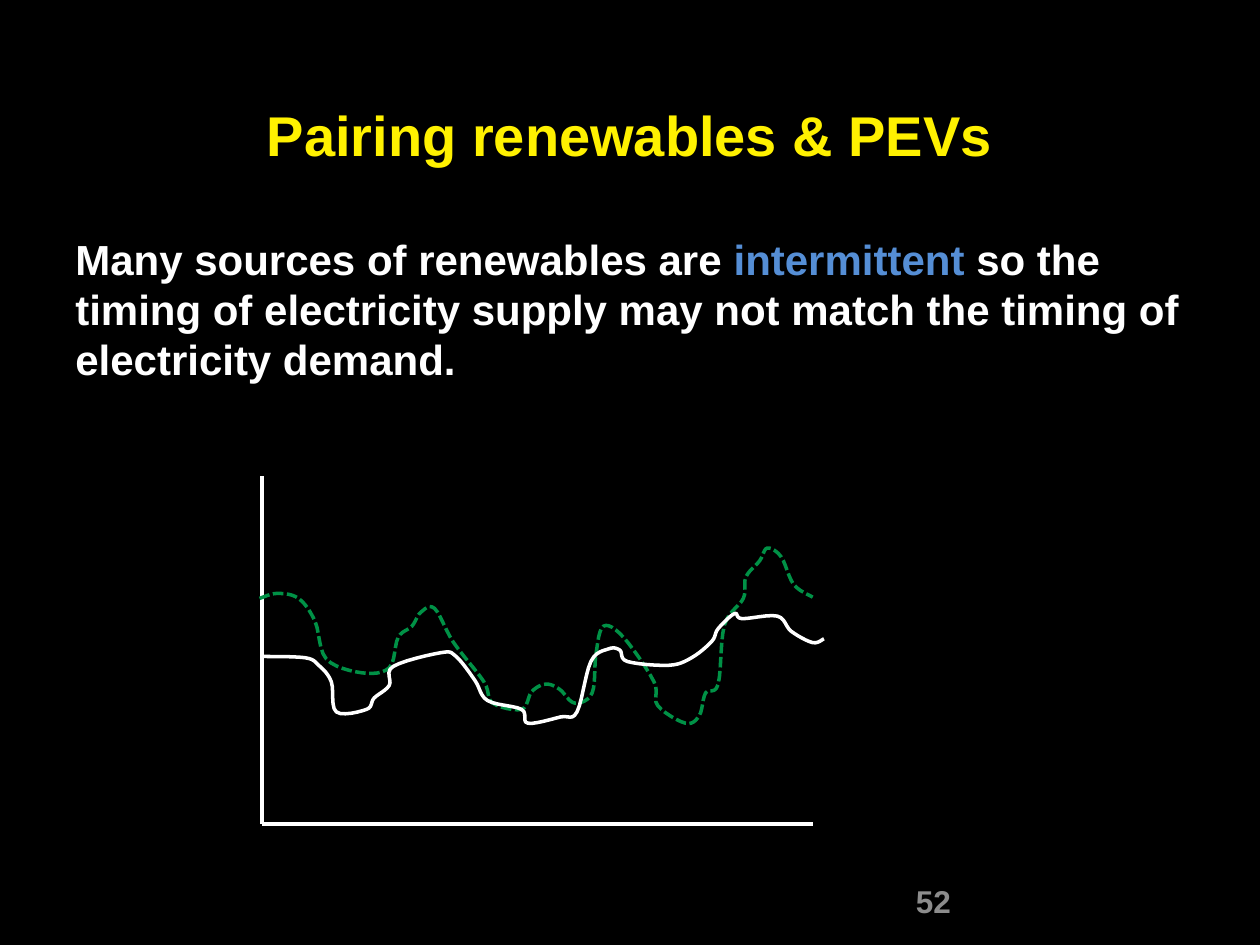
from dataclasses import dataclass

from pptx import Presentation
from pptx.dml.color import RGBColor as RGB
from pptx.enum.dml import MSO_LINE as Dash
from pptx.enum.shapes import MSO_CONNECTOR as Conn
from pptx.enum.text import PP_ALIGN as Align
from pptx.oxml.ns import qn
from pptx.util import Inches, Pt


@dataclass(frozen=True)
class Theme:
    font: str = "Arial"
    back: RGB = RGB(0x00, 0x00, 0x00)
    title: RGB = RGB(0xFF, 0xF1, 0x00)
    body: RGB = RGB(0xFF, 0xFF, 0xFF)
    accent: RGB = RGB(0x55, 0x8E, 0xD5)
    muted: RGB = RGB(0x8C, 0x8C, 0x8C)
    supply: RGB = RGB(0x00, 0x91, 0x46)
    title_size: int = 32
    body_size: int = 24
    number_size: int = 18
    line_width: int = 2


MARGIN, CONTENT_WIDTH = 0.5, 9
AXIS_LEFT, AXIS_RIGHT, AXIS_TOP, AXIS_BASE = 2.08, 6.45, 3.78, 6.54
CURVE_STEPS = 6

SUPPLY_BENDS = {
    "opening crest": [(2.06, 4.75), (2.2, 4.71), (2.37, 4.75), (2.5, 4.93)],
    "first valley": [(2.59, 5.23), (2.87, 5.34), (3.09, 5.3)],
    "second crest": [(3.16, 5.06), (3.27, 4.97), (3.34, 4.86), (3.45, 4.83)],
    "long descent": [(3.6, 5.1), (3.84, 5.41), (3.91, 5.58), (4.14, 5.63)],
    "low hump": [(4.22, 5.49), (4.33, 5.43), (4.44, 5.47), (4.56, 5.58)],
    "third crest": [(4.7, 5.5), (4.73, 5.19), (4.79, 4.97), (4.95, 5.06)],
    "deep valley": [(5.19, 5.41), (5.22, 5.6), (5.44, 5.74), (5.55, 5.68)],
    "steep rise": [(5.6, 5.5), (5.7, 5.43), (5.75, 4.96), (5.9, 4.75)],
    "highest crest": [(5.92, 4.58), (6.03, 4.45), (6.09, 4.35), (6.2, 4.42)],
    "closing fall": [(6.3, 4.64), (6.45, 4.74)],
}
DEMAND_BENDS = {
    "opening level": [(2.08, 5.21), (2.42, 5.22), (2.53, 5.28)],
    "first valley": [(2.63, 5.41), (2.67, 5.65), (2.91, 5.63)],
    "first crest": [(2.97, 5.54), (3.09, 5.44), (3.12, 5.29), (3.5, 5.18)],
    "long descent": [(3.62, 5.21), (3.77, 5.4), (3.87, 5.56), (4.14, 5.63)],
    "second valley": [(4.19, 5.74), (4.45, 5.69), (4.58, 5.65)],
    "second crest": [(4.69, 5.25), (4.83, 5.15), (4.92, 5.16)],
    "plateau": [(4.98, 5.25), (5.31, 5.28), (5.49, 5.22), (5.65, 5.09)],
    "highest crest": [(5.7, 4.99), (5.83, 4.87), (5.89, 4.91), (6.17, 4.89)],
    "closing fall": [(6.28, 5.01), (6.45, 5.1), (6.54, 5.07)],
}


def smooth(bends, steps=CURVE_STEPS):
    """Return points of a Catmull-Rom curve through every knot of the bends."""
    knots = [knot for bend in bends.values() for knot in bend]
    padded = [knots[0], *knots, knots[-1]]
    points = [knots[0]]
    for before, start, end, after in zip(padded, padded[1:], padded[2:], padded[3:]):
        for i in range(1, steps + 1):
            t = i / steps
            points.append(tuple(
                b + t / 2 * (c - a + t * (2 * a - 5 * b + 4 * c - d
                                          + t * (3 * b - 3 * c + d - a)))
                for a, b, c, d in zip(before, start, end, after)))
    return points


class Deck:
    """Builds slides in one theme."""

    def __init__(self, theme):
        self.theme = theme
        self.prs = Presentation()
        self.prs.slide_width, self.prs.slide_height = Inches(10), Inches(7.5)

    def add_slide(self):
        self.s = self.prs.slides.add_slide(self.prs.slide_layouts[6])
        fill = self.s.background.fill
        fill.solid()
        fill.fore_color.rgb = self.theme.back

    def add_text(self, box, runs, size, align=Align.LEFT):
        sp = self.s.shapes.add_textbox(*map(Inches, box))
        tf = sp.text_frame
        tf.word_wrap = True
        p = tf.paragraphs[0]
        p.alignment = align
        for text, color in runs:
            r = p.add_run()
            r.text = text
            r.font.name, r.font.size, r.font.bold = self.theme.font, Pt(size), True
            r.font.color.rgb = color

    def add_group(self):
        return self.s.shapes.add_group_shape().shapes

    def set_line(self, sp, color, dash=None):
        sp.line.color.rgb = color
        sp.line.width = Pt(self.theme.line_width)
        if dash:
            sp.line.dash_style = dash

    def add_axis(self, shapes, start, end):
        cxn = shapes.add_connector(Conn.STRAIGHT, *map(Inches, start + end))
        self.set_line(cxn, self.theme.body)
        sp_pr = cxn._element.spPr
        sp_pr.append(sp_pr.makeelement(qn("a:effectLst"), {}))

    def add_curve(self, shapes, bends, color, dash=None):
        start, *rest = [(Inches(x), Inches(y)) for x, y in smooth(bends)]
        builder = shapes.build_freeform(*start)
        builder.add_line_segments(rest, close=False)
        sp = builder.convert_to_shape()
        sp.shadow.inherit = False
        sp.fill.background()
        self.set_line(sp, color, dash)


def main():
    theme = Theme()
    deck = Deck(theme)
    deck.add_slide()
    deck.add_text((MARGIN, 0.75, CONTENT_WIDTH, 1),
                  [("Pairing renewables & PEVs", theme.title)],
                  theme.title_size, Align.CENTER)
    deck.add_text((MARGIN, 1.8, CONTENT_WIDTH, 5.15), [
        ("Many sources of renewables are ", theme.body),
        ("intermittent", theme.accent),
        (" so the timing of electricity supply may not match the timing of "
         "electricity demand.", theme.body),
    ], theme.body_size)
    deck.add_text((7.17, 6.95, 2.33, 0.4), [("52", theme.muted)], theme.number_size)

    graph = deck.add_group()
    origin = (AXIS_LEFT, AXIS_BASE)
    for axis_end in ((AXIS_LEFT, AXIS_TOP), (AXIS_RIGHT, AXIS_BASE)):
        deck.add_axis(graph, axis_end, origin)
    deck.add_curve(graph, SUPPLY_BENDS, theme.supply, Dash.SQUARE_DOT)
    deck.add_curve(graph, DEMAND_BENDS, theme.body)
    deck.prs.save("out.pptx")


if __name__ == "__main__":
    main()
